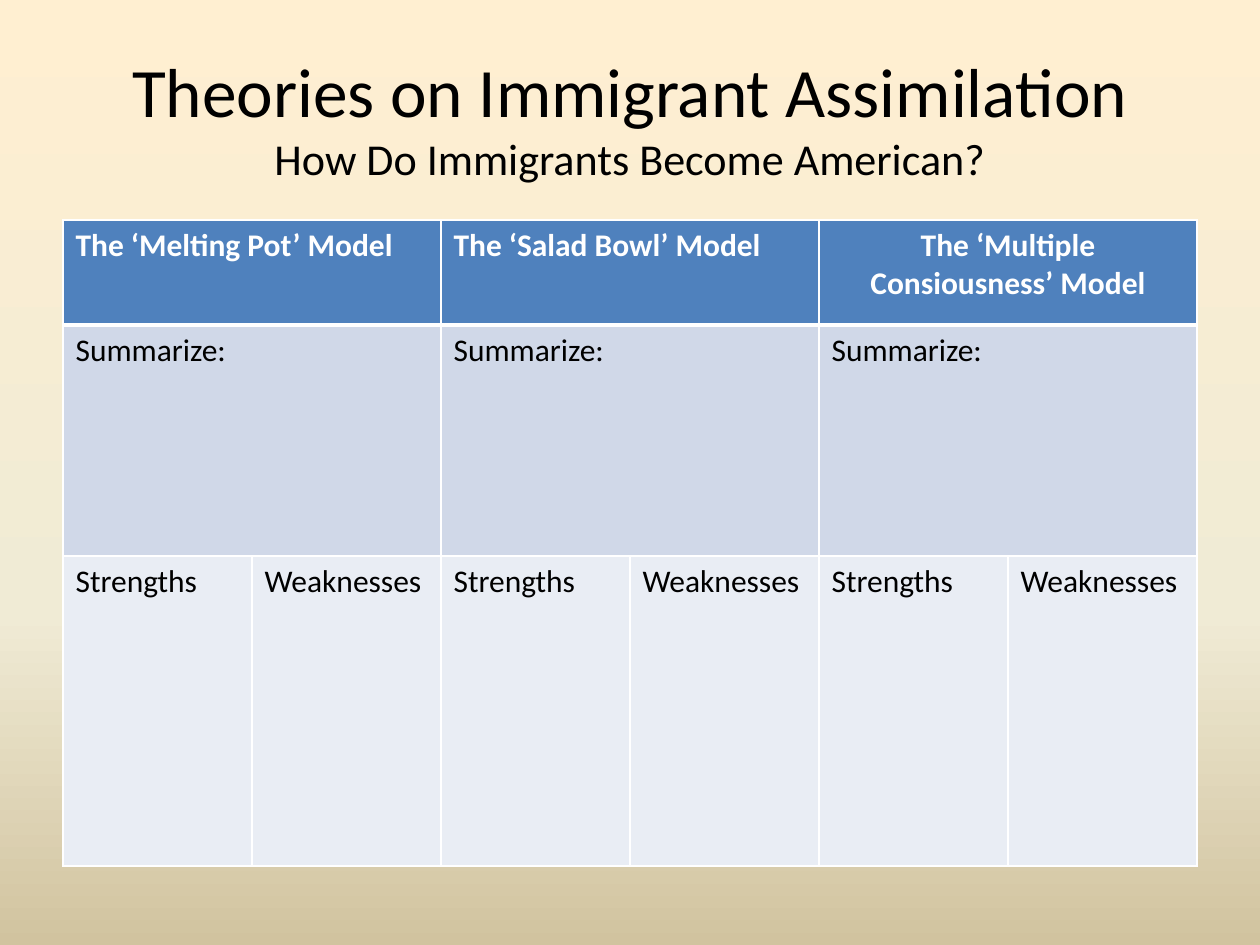
from lxml import etree
from pptx import Presentation
from pptx.dml.color import RGBColor as RGB
from pptx.enum.text import MSO_ANCHOR as ANCHOR, PP_ALIGN as ALIGN
from pptx.oxml.ns import qn
from pptx.util import Emu, Pt

SCALE = 914400 / 126
COLORS = {"black": "000000", "white": "FFFFFF", "header": "4F81BD",
          "summary": "D0D8E8", "detail": "E9EDF4"}
BACKGROUND_STOPS = [(0, "FFEFD1"), (65, "F0EBD5"), (100, "D1C39F")]


def px(length):
    return Emu(round(length * SCALE))


def add_span(para, text, color, **formats):
    span = para.add_run()
    span.text = text
    span.font.color.rgb = RGB.from_string(COLORS[color])
    for name, value in {"name": "Calibri", **formats}.items():
        setattr(span.font, name, value)


deck = Presentation()
deck.slide_width, deck.slide_height = px(1260), px(945)
page = deck.slides.add_slide(deck.slide_layouts[6])

# Background: three stops from top to bottom
page.background.fill.gradient()
gradient = next(page.element.iter(qn("a:gradFill")))
stops = gradient.find(qn("a:gsLst"))
for stop in list(stops):
    stops.remove(stop)
for position, color in BACKGROUND_STOPS:
    stop = etree.SubElement(stops, qn("a:gs"), pos=str(position * 1000))
    etree.SubElement(stop, qn("a:srgbClr"), val=color)
gradient.find(qn("a:lin")).set("ang", "5400000")

# Title and subtitle
box = page.shapes.add_textbox(px(63), px(38), px(1134), px(157))
frame = box.text_frame
frame.word_wrap = True
frame.vertical_anchor = ANCHOR.MIDDLE
para = frame.paragraphs[0]
para.alignment = ALIGN.CENTER
add_span(para, "Theories on Immigrant Assimilation", "black", size=Pt(39.6))
para.add_line_break()
add_span(para, "How Do Immigrants Become American?", "black", size=Pt(25.2))

# Table: each model takes two columns, split only in the last row
models = [("The ‘Melting Pot’ Model", ALIGN.LEFT),
          ("The ‘Salad Bowl’ Model", ALIGN.LEFT),
          ("The ‘Multiple Consiousness’ Model", ALIGN.CENTER)]
row_heights = [105, 231, 310]
row_fills = ["header", "summary", "detail"]
table = page.shapes.add_table(3, 6, px(63), px(220), px(1134),
                              px(sum(row_heights))).table
for column in table.columns:
    column.width = px(189)
for row, height in zip(table.rows, row_heights):
    row.height = px(height)

# Cell fills and borders, with a thick rule under the header
for row_index, row in enumerate(table.rows):
    for cell in row.cells:
        cell.fill.solid()
        cell.fill.fore_color.rgb = RGB.from_string(COLORS[row_fills[row_index]])
        properties = cell._tc.get_or_add_tcPr()
        for order, side in enumerate("LRTB"):
            thick = (row_index, side) in [(0, "B"), (1, "T")]
            line = etree.Element(qn(f"a:ln{side}"), w=str(Pt(3 if thick else 1)))
            fill = etree.SubElement(line, qn("a:solidFill"))
            etree.SubElement(fill, qn("a:srgbClr"), val=COLORS["white"])
            properties.insert(order, line)

# Cell text
for index, (model, alignment) in enumerate(models):
    left, right = index * 2, index * 2 + 1
    for row_index in (0, 1):
        table.cell(row_index, left).merge(table.cell(row_index, right))
    header = table.cell(0, left).text_frame.paragraphs[0]
    header.alignment = alignment
    add_span(header, model, "white", size=Pt(18), bold=True)
    for row_index, column_index, text in [(1, left, "Summarize:"),
                                          (2, left, "Strengths"),
                                          (2, right, "Weaknesses")]:
        para = table.cell(row_index, column_index).text_frame.paragraphs[0]
        add_span(para, text, "black", size=Pt(18), bold=False)

deck.save("out.pptx")
